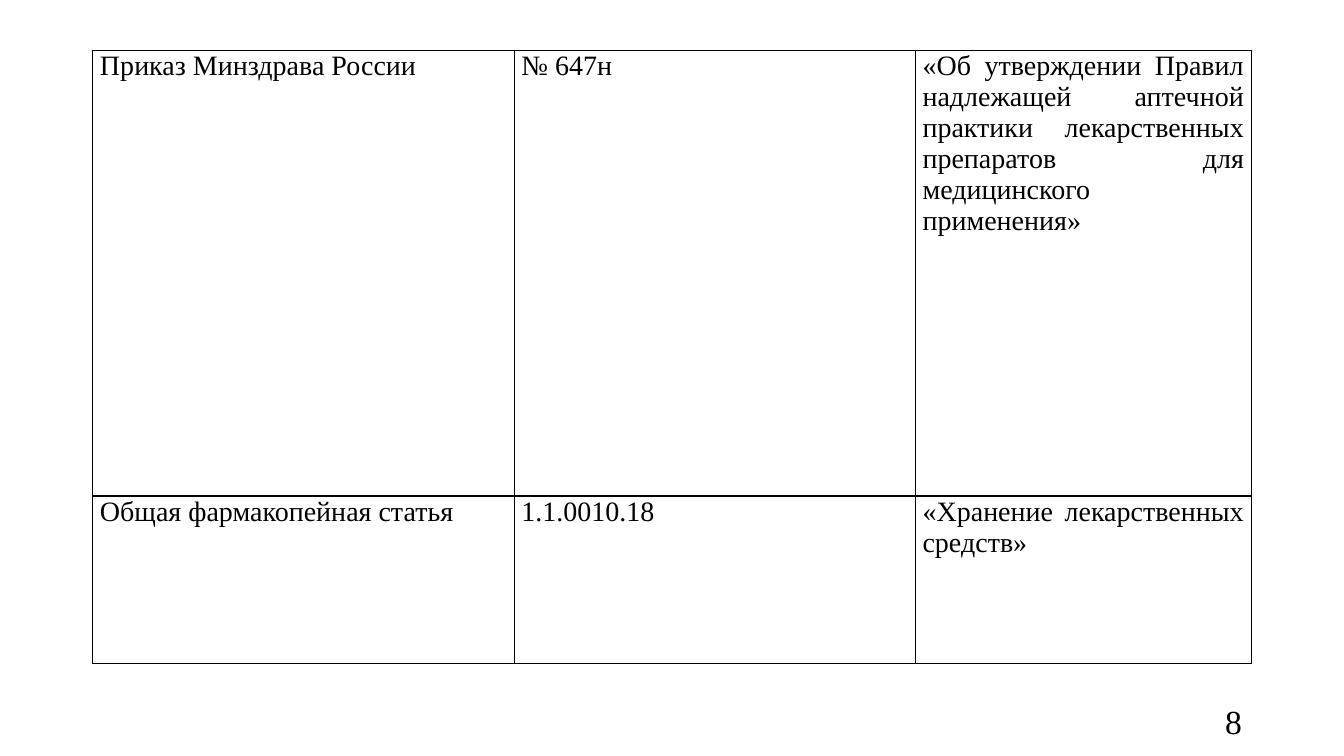
import pptx
import pptx.util
import pptx.dml.color
import pptx.enum.text
import pptx.oxml
import pptx.oxml.ns
from pptx.util import Cm

BLACK = "000000"
ALIGN = pptx.enum.text.PP_ALIGN


def color(hex_value):
    return pptx.dml.color.RGBColor.from_string(hex_value)


def write(text_frame, text, size, alignment):
    text_frame.text = text
    paragraph = text_frame.paragraphs[0]
    paragraph.alignment = alignment
    font = paragraph.runs[0].font
    font.name = "Times New Roman"
    font.size = pptx.util.Pt(size)
    font.color.rgb = color(BLACK)


presentation = pptx.Presentation()
presentation.slide_width = Cm(33.87)
presentation.slide_height = Cm(19.05)
slide = presentation.slides.add_slide(presentation.slide_layouts[6])

regulations = [
    ["Приказ Минздрава России", "№ 647н",
     "«Об утверждении Правил надлежащей аптечной практики лекарственных "
     "препаратов для медицинского применения»"],
    ["Общая фармакопейная статья", "1.1.0010.18",
     "«Хранение лекарственных средств»"],
]
column_widths = [10.62, 10.11, 8.46]
row_heights = [11.23, 4.22]

regulation_table = slide.shapes.add_table(
    len(row_heights), len(column_widths), Cm(2.34), Cm(1.27),
    Cm(sum(column_widths)), Cm(sum(row_heights))).table
regulation_table.first_row = False
regulation_table.horz_banding = False
for column, width in zip(regulation_table.columns, column_widths):
    column.width = Cm(width)

for row, height, regulation in zip(regulation_table.rows, row_heights, regulations):
    row.height = Cm(height)
    for cell, text in zip(row.cells, regulation):
        cell.margin_left = cell.margin_right = Cm(0.18)
        cell.margin_top = cell.margin_bottom = 0
        write(cell.text_frame, text, 20, ALIGN.JUSTIFY)
        cell.fill.background()
        properties = cell._tc.get_or_add_tcPr()
        for position, side in enumerate(["lnL", "lnR", "lnT", "lnB"]):
            properties.insert(position, pptx.oxml.parse_xml(
                f'<a:{side} {pptx.oxml.ns.nsdecls("a")} w="12700"><a:solidFill>'
                f'<a:srgbClr val="{BLACK}"/></a:solidFill></a:{side}>'))

page_number = slide.shapes.add_textbox(Cm(23.93), Cm(17.65), Cm(7.62), Cm(1.02))
page_number.text_frame.word_wrap = True
page_number.text_frame.vertical_anchor = pptx.enum.text.MSO_ANCHOR.MIDDLE
write(page_number.text_frame, "8", 24, ALIGN.RIGHT)

presentation.save("out.pptx")
